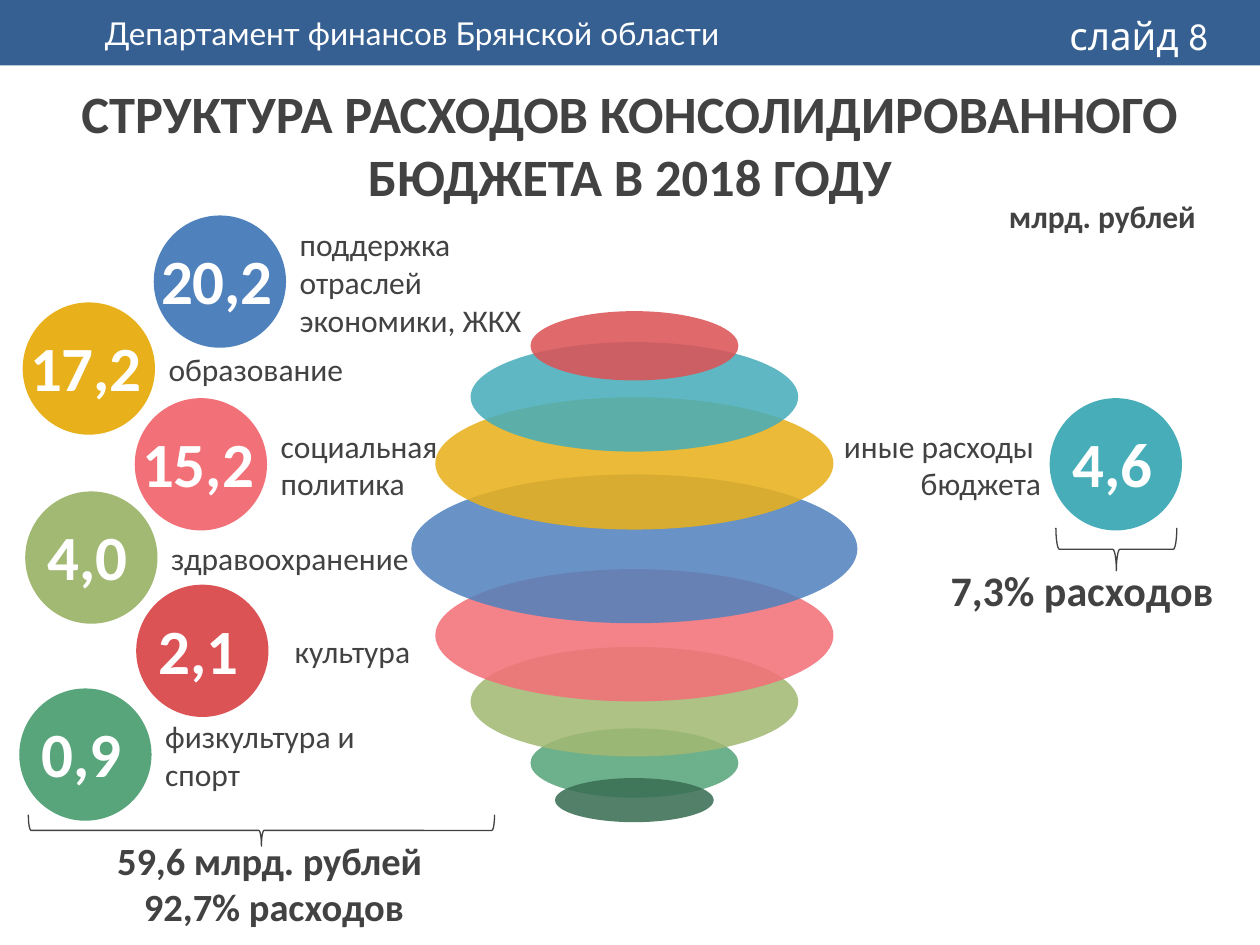
from lxml.etree import SubElement
from pptx import Presentation
from pptx.dml.color import RGBColor
from pptx.enum.shapes import MSO_SHAPE
from pptx.enum.text import MSO_ANCHOR, PP_ALIGN
from pptx.oxml.ns import qn
from pptx.util import Pt

# Theme
THEME = {
    "band": "376092", "text": "424242", "white": "FFFFFF",
    "blue": "4F81BD", "gold": "E8B01B", "pink": "F27078", "olive": "A2B973",
    "red": "DC5356", "green": "58A57C", "teal": "47ADB9", "pine": "3A6E53",
    "font": "Calibri", "header_font": "Lato", "number_font": "League Spartan",
    "title": 30, "value": 36, "body": 18, "total": 22, "share": 24,
}
LEFT, CENTER, RIGHT = PP_ALIGN.LEFT, PP_ALIGN.CENTER, PP_ALIGN.RIGHT

# Content
HEADER = "Департамент финансов Брянской области"
PAGE = "слайд 8"
TITLE = "СТРУКТУРА РАСХОДОВ КОНСОЛИДИРОВАННОГО БЮДЖЕТА В 2018 ГОДУ"
UNIT = "млрд. рублей"
MAIN_TOTAL = ["59,6 млрд. рублей ", "92,7% расходов"]
OTHER_TOTAL = ["7,3% расходов"]

# Value, label lines, colour, circle left and top, label offset, width, alignment
ITEMS = [
    ("20,2", ["поддержка отраслей экономики, ЖКХ"], "blue", 87.84, 123.1, 76.3, 142, LEFT),
    ("17,2", ["образование"], "gold", 12.96, 172.8, 76.3, 142, LEFT),
    ("15,2", ["социальная политика"], "pink", 77, 227.5, 76.3, 142, LEFT),
    ("4,6", ["иные расходы ", "бюджета"], "teal", 599.8, 227.5, -201.6, 203.8, RIGHT),
    ("4,0", ["здравоохранение"], "olive", 14.4, 280.8, 76.3, 161.3, LEFT),
    ("2,1", ["культура"], "red", 77.8, 334.1, 83.5, 161.3, LEFT),
    ("0,9", ["физкультура и спорт"], "green", 11, 393.4, 76.3, 161.3, LEFT),
]

# Sphere slices from back to front: colour, width, height, centre y, opacity in %
SLICES = [
    ("green", 118.8, 39.6, 436, 87),
    ("olive", 187.2, 62.6, 401, 87),
    ("pink", 227.5, 75.6, 363, 87),
    ("blue", 254.9, 85, 313.6, 85),
    ("gold", 227.5, 75.6, 264.8, 87),
    ("teal", 187.2, 62.6, 226.8, 87),
    ("red", 118.8, 39.6, 197.6, 87),
    ("pine", 90.7, 25.2, 457.2, 87),
]
SPHERE_X = 362.5
CIRCLE = 75.6


def color(name):
    return RGBColor.from_string(THEME[name])


def add_shape(slide, kind, x, y, w, h, fill=None, line=None):
    sp = slide.shapes.add_shape(kind, Pt(x), Pt(y), Pt(w), Pt(h))
    sp.shadow.inherit = False
    if fill:
        sp.fill.solid()
        sp.fill.fore_color.rgb = color(fill)
    else:
        sp.fill.background()
    if line:
        sp.line.color.rgb = color(line)
        sp.line.width = Pt(0.75)
    else:
        sp.line.fill.background()
    return sp


def add_quarter_turned(slide, kind, cx, cy, w, h, **style):
    """Place a shape turned by 90 degrees that looks w wide and h high."""
    sp = add_shape(slide, kind, cx - h / 2, cy - w / 2, h, w, **style)
    sp.rotation = 90
    return sp


def set_text(sp, lines, size, fill="text", bold=False, align=LEFT,
             font="font", anchor=MSO_ANCHOR.MIDDLE):
    tf = sp.text_frame
    tf.word_wrap = True
    tf.vertical_anchor = anchor
    for i, line in enumerate(lines):
        p = tf.paragraphs[0] if i == 0 else tf.add_paragraph()
        p.alignment = align
        r = p.add_run()
        r.text = line
        r.font.name = THEME[font]
        r.font.size = Pt(size)
        r.font.bold = bold
        r.font.color.rgb = color(fill)


def add_text(slide, x, y, w, h, lines, size, **style):
    sp = slide.shapes.add_textbox(Pt(x), Pt(y), Pt(w), Pt(h))
    set_text(sp, lines, size, **style)


def add_slice(slide, name, w, h, cy, opacity):
    sp = add_quarter_turned(slide, MSO_SHAPE.OVAL, SPHERE_X, cy, w, h, fill=name)
    clr = sp.fill._xPr.find(qn("a:solidFill"))[0]
    SubElement(clr, qn("a:alpha")).set("val", str(opacity * 1000))


def add_item(slide, value, label, name, x, y, offset, width, align):
    add_shape(slide, MSO_SHAPE.OVAL, x, y, CIRCLE, CIRCLE, fill=name)
    shift = -2.9 if len(value) == 4 else 5.8
    add_text(slide, x + shift, y + 11.6, 85, 51, [value], THEME["value"],
             fill="white", bold=True, anchor=MSO_ANCHOR.TOP)
    add_text(slide, x + offset, y, width, CIRCLE, label, THEME["body"], align=align)


def main():
    prs = Presentation()
    prs.slide_width, prs.slide_height = Pt(720), Pt(540)
    slide = prs.slides.add_slide(prs.slide_layouts[6])

    # Header band and title
    band = add_shape(slide, MSO_SHAPE.RECTANGLE, 0, 0, 720, 37.4, fill="band")
    band.text_frame.margin_left = Pt(60)
    set_text(band, [HEADER], THEME["body"], fill="white", font="header_font")
    add_text(slide, 8.6, 37.4, 702.8, 90, [TITLE], THEME["title"],
             bold=True, align=CENTER)

    # Sphere of slices, then circles with their labels
    for row in SLICES:
        add_slice(slide, *row)
    for row in ITEMS:
        add_item(slide, *row)

    # Unit, braces and totals
    add_text(slide, 560.9, 108.7, 129.6, 29, [UNIT], THEME["body"],
             bold=True, align=RIGHT)
    for cx, cy, w, h in [(149.4, 474.5, 266.4, 18), (637.9, 313.9, 69.1, 24.5)]:
        add_quarter_turned(slide, MSO_SHAPE.RIGHT_BRACE, cx, cy, w, h, line="text")
    add_text(slide, -11.5, 474.5, 336.2, 60.5, MAIN_TOTAL, THEME["total"],
             bold=True, align=CENTER)
    add_text(slide, 501.8, 319, 198.7, 36, OTHER_TOTAL, THEME["share"],
             bold=True, align=RIGHT)

    # Slide number
    add_text(slide, 604, 3.6, 108, 33.8, [PAGE], THEME["total"],
             fill="white", font="number_font", anchor=MSO_ANCHOR.TOP)

    prs.save("out.pptx")


if __name__ == "__main__":
    main()
